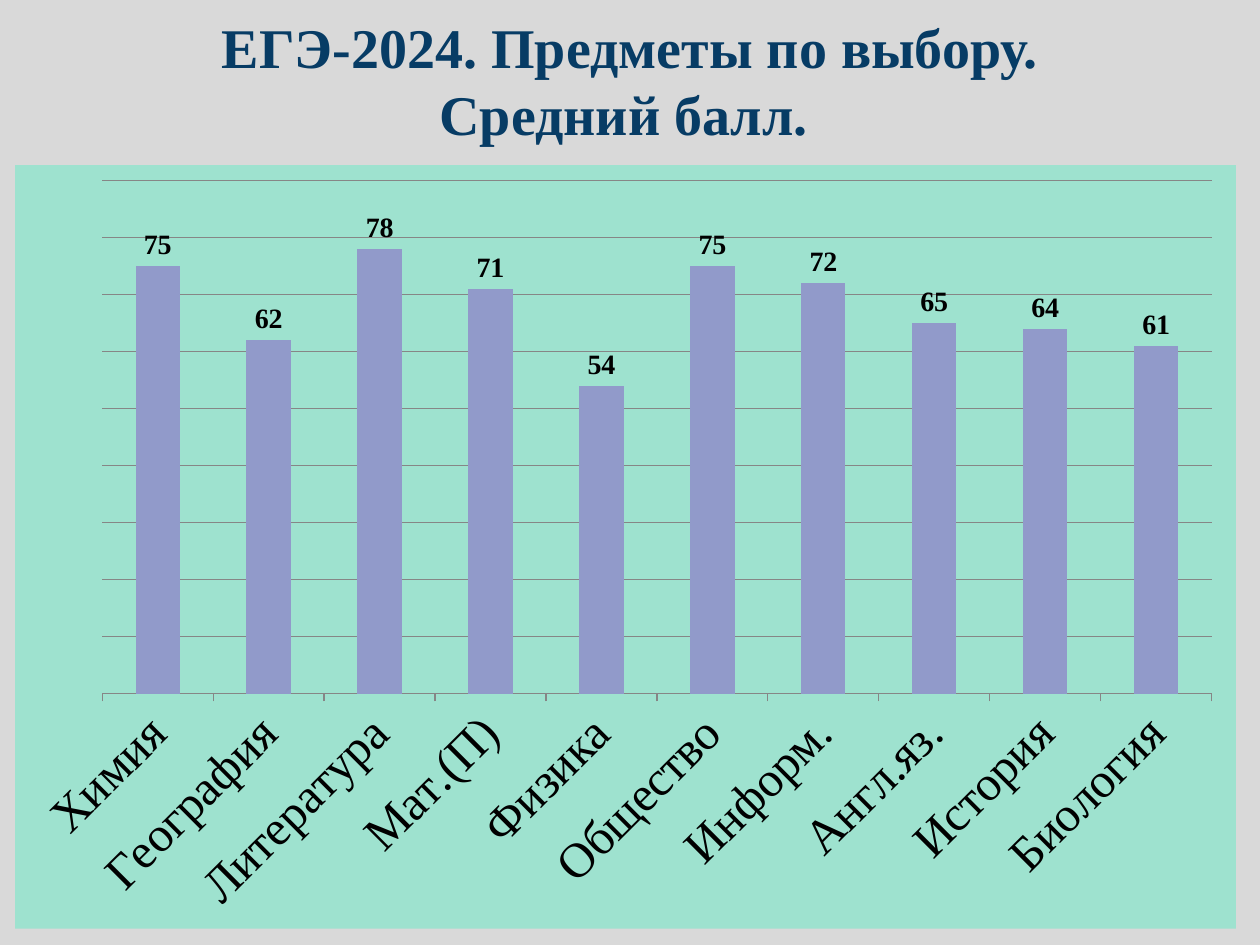
from lxml.etree import SubElement
from pptx import Presentation
from pptx.chart.data import CategoryChartData
from pptx.dml.color import RGBColor
from pptx.enum.chart import XL_CHART_TYPE, XL_LABEL_POSITION, XL_TICK_LABEL_POSITION, XL_TICK_MARK
from pptx.enum.text import MSO_ANCHOR, PP_ALIGN
from pptx.oxml.ns import qn
from pptx.util import Pt

FONT = "Times New Roman"
COLORS = {"background": "D9D9D9", "title": "073C65", "panel": "9EE2CF",
          "bar": "919ACA", "line": "868686", "text": "000000"}
SCORES = {"Химия": 75, "География": 62, "Литература": 78, "Мат.(П)": 71, "Физика": 54,
          "Общество": 75, "Информ.": 72, "Англ.яз.": 65, "История": 64, "Биология": 61}


def paint(fill, name):
    fill.solid()
    fill.fore_color.rgb = RGBColor.from_string(COLORS[name])


def style_font(font, size, bold=False, color="text"):
    font.name = FONT
    font.size = Pt(size)
    font.bold = bold
    font.color.rgb = RGBColor.from_string(COLORS[color])


def add_run(p, text, **fmt):
    r = p.add_run()
    r.text = text
    style_font(r.font, **fmt)


def add_title(s, x, y, w, h):
    tf = s.shapes.add_textbox(Pt(x), Pt(y), Pt(w), Pt(h)).text_frame
    tf.word_wrap = True
    tf.vertical_anchor = MSO_ANCHOR.TOP
    lines = [[("ЕГЭ-2024. Предметы по выбору.", 32)], [("Средний балл.", 32), (" ", 28)]]
    for i, runs in enumerate(lines):
        p = tf.add_paragraph() if i else tf.paragraphs[0]
        p.alignment = PP_ALIGN.CENTER
        for text, size in runs:
            add_run(p, text, size=size, bold=True, color="title")


def style_axes(chart):
    cat, val = chart.category_axis, chart.value_axis
    cat.major_tick_mark = XL_TICK_MARK.OUTSIDE
    cat.tick_label_position = XL_TICK_LABEL_POSITION.LOW
    cat.has_major_gridlines = False
    style_font(cat.tick_labels.font, 28)
    cat._element.find(qn("c:txPr")).find(qn("a:bodyPr")).set("rot", "-2700000")
    val.visible = False
    val.minimum_scale, val.maximum_scale, val.major_unit = 0, 90, 10
    val.has_major_gridlines = True
    for line in (cat.format.line, val.major_gridlines.format.line):
        paint(line.fill, "line")
        line.width = Pt(0.75)


def add_score_chart(s, x, y, w, h):
    data = CategoryChartData()
    data.categories = list(SCORES)
    data.add_series("Средний балл", list(SCORES.values()))
    chart = s.shapes.add_chart(XL_CHART_TYPE.COLUMN_CLUSTERED,
                               Pt(x), Pt(y), Pt(w), Pt(h), data).chart
    chart.has_legend = False
    chart.has_title = False
    style_font(chart.font, 10)
    style_axes(chart)

    plot = chart.plots[0]
    plot.gap_width = 150
    plot.vary_by_categories = False
    paint(plot.series[0].format.fill, "bar")
    plot.has_data_labels = True
    labels = plot.data_labels
    labels.show_value = True
    labels.position = XL_LABEL_POSITION.OUTSIDE_END
    style_font(labels.font, 16, bold=True)

    # The chart area has no fill in the public API.
    sp_pr = SubElement(chart._chartSpace, qn("c:spPr"))
    fill = SubElement(sp_pr, qn("a:solidFill"))
    SubElement(fill, qn("a:srgbClr"), val=COLORS["panel"])
    SubElement(SubElement(sp_pr, qn("a:ln")), qn("a:noFill"))
    chart._chartSpace.find(qn("c:chart")).addnext(sp_pr)


def main():
    prs = Presentation()
    prs.slide_width, prs.slide_height = Pt(720), Pt(540)
    s = prs.slides.add_slide(prs.slide_layouts[6])
    paint(s.background.fill, "background")
    add_score_chart(s, 8.6, 94.3, 697.7, 436.3)
    add_title(s, 36, 3.6, 648, 49.7)
    prs.save("out.pptx")


if __name__ == "__main__":
    main()
